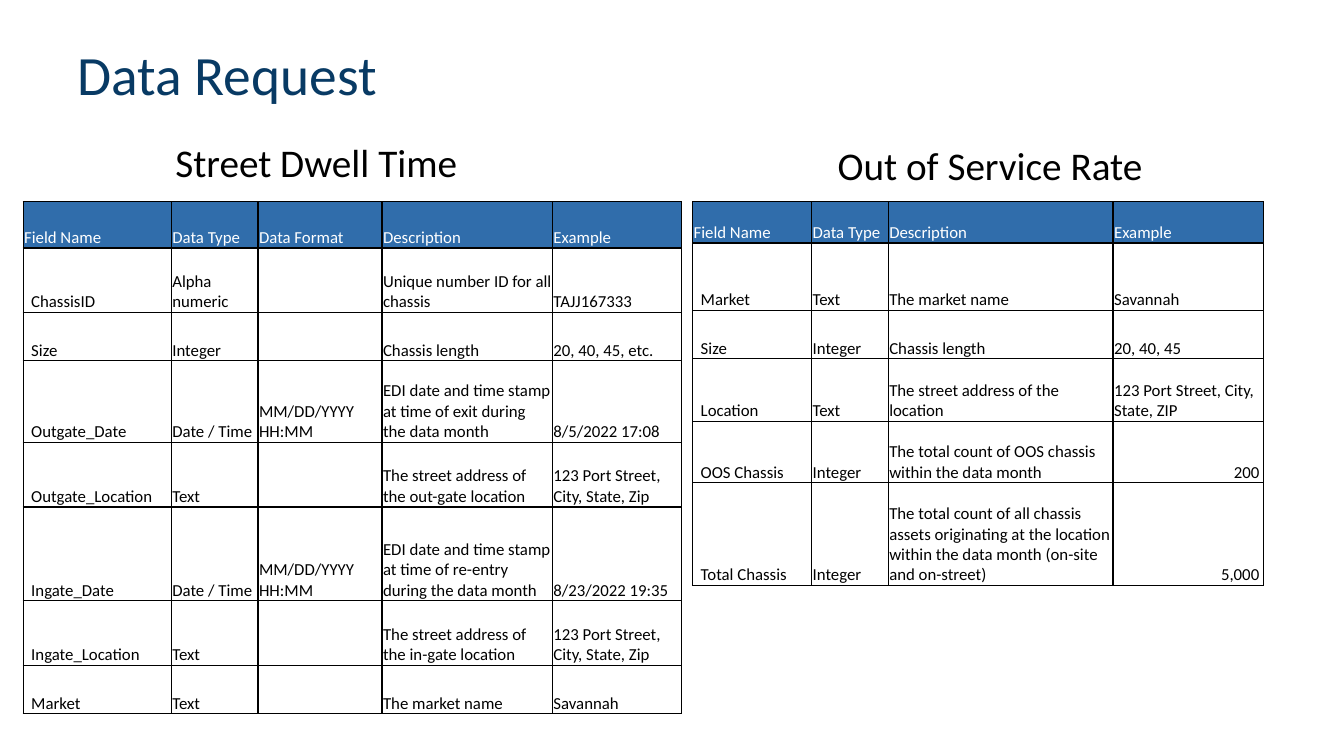
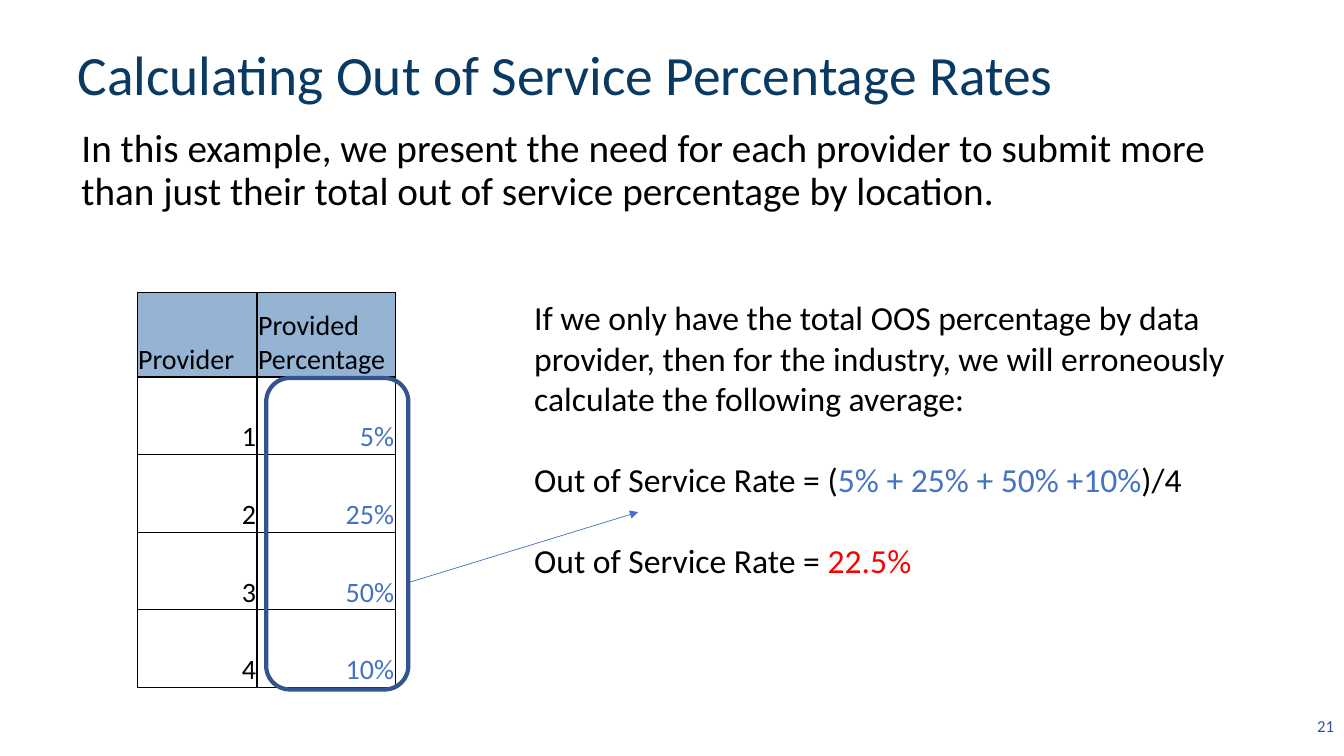
from lxml.etree import SubElement
from pptx import Presentation
from pptx.dml.color import RGBColor
from pptx.enum.shapes import MSO_CONNECTOR, MSO_SHAPE
from pptx.enum.text import MSO_ANCHOR, MSO_AUTO_SIZE, PP_ALIGN
from pptx.oxml.ns import qn
from pptx.util import Inches, Pt

FONT = "Calibri"
BLACK = RGBColor(0x00, 0x00, 0x00)
WHITE = RGBColor(0xFF, 0xFF, 0xFF)
NAVY = RGBColor(0x08, 0x3A, 0x64)
HEADER_BLUE = RGBColor(0x30, 0x6D, 0xAB)
PALE_BLUE = RGBColor(0x95, 0xB4, 0xD4)
ACCENT = RGBColor(0x44, 0x72, 0xC4)
OUTLINE = RGBColor(0x32, 0x54, 0x91)
PAGE_BLUE = RGBColor(0x2F, 0x55, 0x97)
RED = RGBColor(0xFF, 0x00, 0x00)

DWELL_ROWS = [
    ("Field Name", "Data Type", "Data Format", "Description", "Example"),
    ("ChassisID", "Alpha numeric", "", "Unique number ID for all chassis", "TAJJ167333"),
    ("Size", "Integer", "", "Chassis length", "20, 40, 45, etc."),
    ("Outgate_Date", "Date / Time", "MM/DD/YYYY\nHH:MM",
     "EDI date and time stamp at time of exit during the data month", "8/5/2022 17:08"),
    ("Outgate_Location", "Text", "", "The street address of the out-gate location",
     "123 Port Street, City, State, Zip"),
    ("Ingate_Date", "Date / Time", "MM/DD/YYYY\nHH:MM",
     "EDI date and time stamp at time of re-entry during the data month", "8/23/2022 19:35"),
    ("Ingate_Location", "Text", "", "The street address of the in-gate location",
     "123 Port Street, City, State, Zip"),
    ("Market", "Text", "", "The market name", "Savannah"),
]
DWELL_WIDTHS = [1.47, 0.86, 1.23, 1.69, 1.28]
DWELL_HEIGHTS = [0.46, 0.64, 0.48, 0.81, 0.64, 0.93, 0.64, 0.48]

SERVICE_ROWS = [
    ("Field Name", "Data Type", "Description", "Example"),
    ("Market", "Text", "The market name", "Savannah"),
    ("Size", "Integer", "Chassis length", "20, 40, 45"),
    ("Location", "Text", "The street address of the location",
     "123 Port Street, City, State, ZIP"),
    ("OOS Chassis", "Integer", "The total count of OOS chassis within the data month", "200"),
    ("Total Chassis", "Integer",
     "The total count of all chassis assets originating at the location "
     "within the data month (on-site and on-street)", "5,000"),
]
SERVICE_WIDTHS = [1.18, 0.76, 2.23, 1.49]
SERVICE_HEIGHTS = [0.41, 0.67, 0.48, 0.62, 0.61, 1.02]

PROVIDER_ROWS = [("Provider", "Provided Percentage"),
                 ("1", "5%"), ("2", "25%"), ("3", "50%"), ("4", "10%")]
PROVIDER_WIDTHS = [1.19, 1.37]
PROVIDER_HEIGHTS = [0.84] + [0.77] * 4

INTRO = ("In this example, we present the need for each provider to submit more "
         "than just their total out of service percentage by location.")
AVERAGE = [
    [("If we only have the total OOS percentage by data provider, then for the industry, "
      "we will erroneously calculate the following average:", BLACK)],
    [("Out of Service Rate = (", BLACK), ("5% + 25% + 50% +10%", ACCENT), (")/4", BLACK)],
    [("Out of Service Rate = ", BLACK), ("22.5%", RED)],
]


def set_font(p, size, color):
    p.font.name, p.font.size, p.font.bold = FONT, Pt(size), False
    p.font.color.rgb = color


def add_titled_slide(prs, title):
    s = prs.slides.add_slide(prs.slide_layouts[5])
    s.shapes.title.left, s.shapes.title.top = Inches(0.67), Inches(0.53)
    s.shapes.title.width, s.shapes.title.height = Inches(10.46), Inches(0.47)
    tf = s.shapes.title.text_frame
    tf.text = title
    tf.auto_size = MSO_AUTO_SIZE.NONE
    tf.vertical_anchor = MSO_ANCHOR.MIDDLE
    p = tf.paragraphs[0]
    p.alignment, p.line_spacing = PP_ALIGN.LEFT, 0.9
    set_font(p, 39.6, NAVY)
    return s


def add_text(s, box, paragraphs, size, line_spacing=1.0, gap=0):
    """Add a text box; each paragraph is a list of (text, colour) runs."""
    tf = s.shapes.add_textbox(*map(Inches, box)).text_frame
    tf.word_wrap = True
    for i, runs in enumerate(paragraphs):
        p = tf.add_paragraph() if i else tf.paragraphs[0]
        p.line_spacing = line_spacing
        if i:
            p.space_before = Pt(gap)
        set_font(p, size, runs[0][1])
        for text, color in runs:
            r = p.add_run()
            r.text = text
            r.font.color.rgb = color
    return tf


def add_borders(cell):
    tcPr = cell._tc.get_or_add_tcPr()
    for side in ("lnL", "lnR", "lnT", "lnB"):
        ln = SubElement(tcPr, qn(f"a:{side}"), w=str(Pt(1)))
        fill = SubElement(ln, qn("a:solidFill"))
        SubElement(fill, qn("a:srgbClr"), val=str(BLACK))


def add_grid(s, left, top, widths, heights, rows, size, header_fill, header_color,
             indent=0, pad=0):
    """Add a bordered table; body numbers go right, percentages are accented."""
    table = s.shapes.add_table(len(rows), len(widths), Inches(left), Inches(top),
                               Inches(sum(widths)), Inches(sum(heights))).table
    table.first_row = table.horz_banding = False
    for column, width in zip(table.columns, widths):
        column.width = Inches(width)
    for i, (row, height) in enumerate(zip(rows, heights)):
        table.rows[i].height = Inches(height)
        for j, text in enumerate(row):
            cell = table.cell(i, j)
            add_borders(cell)
            cell.margin_top = cell.margin_bottom = 0
            cell.margin_left = Inches(indent if i and j == 0 else 0.01)
            cell.margin_right = 0
            cell.vertical_anchor = MSO_ANCHOR.BOTTOM
            cell.text = text
            color = ACCENT if text.endswith("%") else BLACK
            if i == 0:
                cell.fill.solid()
                cell.fill.fore_color.rgb = header_fill
                color = header_color
            else:
                cell.fill.background()
            number = text.replace(",", "").rstrip("%").isdigit()
            if number:
                cell.margin_right = Inches(pad)
            for p in cell.text_frame.paragraphs:
                p.alignment = PP_ALIGN.RIGHT if number else PP_ALIGN.LEFT
                set_font(p, size, color)


def add_arrow(s, start, end):
    line = s.shapes.add_connector(MSO_CONNECTOR.STRAIGHT, *map(Inches, start + end))
    line.line.color.rgb = ACCENT
    line.line.width = Pt(0.5)
    SubElement(line.line._get_or_add_ln(), qn("a:tailEnd"), type="triangle")
    SubElement(line._element.spPr, qn("a:effectLst"))


def build_data_request(prs):
    s = add_titled_slide(prs, "Data Request")
    for box, heading in [((1.64, 1.38, 3.48, 0.59), "Street Dwell Time"),
                         ((8.21, 1.41, 3.37, 0.59), "Out of Service Rate")]:
        add_text(s, box, [[(heading, BLACK)]], 28, 0.9)
    for left, widths, heights, rows in [
            (0.23, DWELL_WIDTHS, DWELL_HEIGHTS, DWELL_ROWS),
            (6.87, SERVICE_WIDTHS, SERVICE_HEIGHTS, SERVICE_ROWS)]:
        add_grid(s, left, 2, widths, heights, rows, 12, HEADER_BLUE, WHITE,
                 indent=0.08, pad=0.04)


def build_percentage_rates(prs):
    s = add_titled_slide(prs, "Calculating Out of Service Percentage Rates")
    add_text(s, (0.71, 1.23, 11.96, 1.4), [[(INTRO, BLACK)]], 28, 0.9)
    add_grid(s, 1.36, 2.9, PROVIDER_WIDTHS, PROVIDER_HEIGHTS, PROVIDER_ROWS, 20,
             PALE_BLUE, BLACK, pad=0.01)
    add_text(s, (5.2, 2.9, 7.66, 2.93), AVERAGE, 24, gap=29)
    add_arrow(s, (4.05, 5.78), (6.33, 5.08))

    frame = s.shapes.add_shape(MSO_SHAPE.ROUNDED_RECTANGLE,
                               *map(Inches, (2.64, 3.75, 1.41, 3.09)))
    frame.shadow.inherit = False
    frame.fill.background()
    frame.line.color.rgb = OUTLINE
    frame.line.width = Pt(3)

    tf = add_text(s, (12.86, 6.97, 0.47, 0.47), [[("21", PAGE_BLUE)]], 12)
    tf.vertical_anchor = MSO_ANCHOR.MIDDLE
    tf.paragraphs[0].alignment = PP_ALIGN.RIGHT


def main():
    prs = Presentation()
    prs.slide_width, prs.slide_height = Inches(13.33), Inches(7.5)
    build_data_request(prs)
    build_percentage_rates(prs)
    prs.save("out.pptx")


if __name__ == "__main__":
    main()
